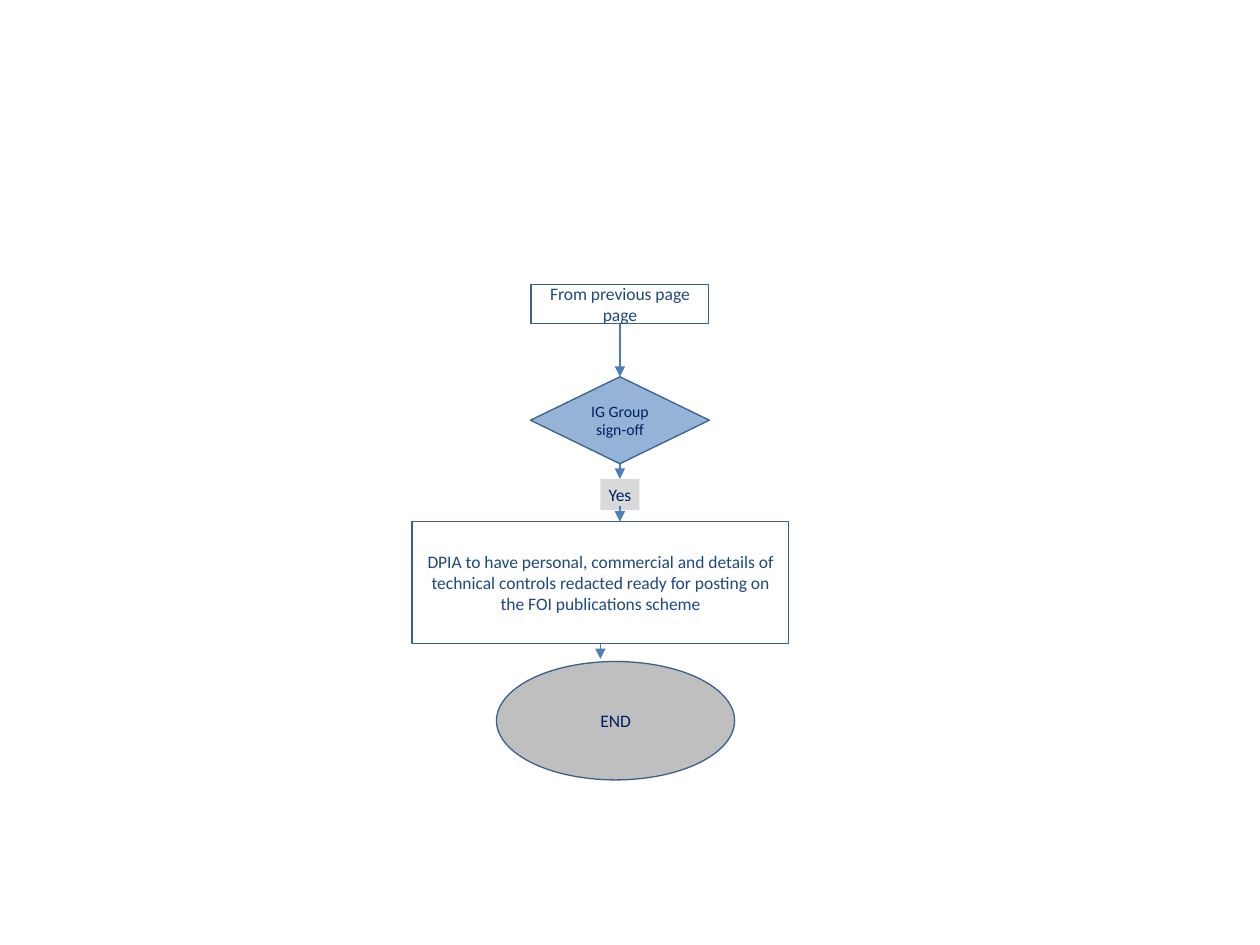
"""Build the closing page of the DPIA sign-off flowchart."""
import dataclasses

import pptx
import pptx.dml.color
import pptx.enum.shapes
import pptx.enum.text
import pptx.oxml
import pptx.oxml.ns
import pptx.util

SHAPES = pptx.enum.shapes.MSO_SHAPE
ANCHOR = pptx.enum.text.MSO_ANCHOR
TOP, BOTTOM = 0, 2
AXIS = 49.2


@dataclasses.dataclass(frozen=True)
class Theme:
    font: str = "Calibri"
    body: float = 10
    small: float = 9
    stroke: float = 0.75
    outline: str = "3A5F8C"
    arrow: str = "4B7EBC"
    navy: str = "002060"
    blue: str = "1F497D"
    white: str = "FFFFFF"
    decision: str = "95B3D7"
    answer: str = "D9D9D9"
    terminal: str = "BFBFBF"


THEME = Theme()

STEPS = {
    "previous": dict(text="From previous page page", kind=SHAPES.RECTANGLE,
                     centre=AXIS, top=30.13, width=14.1, height=4.13,
                     fill=THEME.white, ink=THEME.blue),
    "sign-off": dict(text="IG Group sign-off", kind=SHAPES.DIAMOND,
                     centre=AXIS, top=39.87, width=14.2, height=9.2,
                     fill=THEME.decision, ink=THEME.navy, size=THEME.small, inset=0),
    "yes": dict(text="Yes", kind=SHAPES.RECTANGLE,
                centre=AXIS, top=50.67, width=3.1, height=3.33,
                fill=THEME.answer, ink=THEME.navy, inset=0.04,
                outlined=False, anchor=ANCHOR.TOP),
    "redaction": dict(text="DPIA to have personal, commercial and details of technical "
                           "controls redacted ready for posting on the FOI publications scheme",
                      kind=SHAPES.RECTANGLE,
                      centre=47.65, top=55.2, width=29.9, height=12.93,
                      fill=THEME.white, ink=THEME.blue),
    "end": dict(text="END", kind=SHAPES.OVAL,
                centre=48.85, top=70, width=18.9, height=12.53,
                fill=THEME.terminal, ink=THEME.navy),
}

ARROWS = [
    dict(x=AXIS, start=34.26, end=39.87, source="previous", target="sign-off"),
    dict(x=AXIS, start=49.07, end=50.67, source="sign-off", target="yes"),
    dict(x=AXIS, start=53.6, end=55.2),
    dict(x=47.65, start=68.13, end=69.73, source="redaction"),
]

deck = pptx.Presentation()
deck.slide_width = pptx.util.Inches(10)
deck.slide_height = pptx.util.Inches(7.5)
page = deck.slides.add_slide(deck.slide_layouts[6])


def across(percent):
    return round(deck.slide_width * percent / 100)


def down(percent):
    return round(deck.slide_height * percent / 100)


def colour(value):
    return pptx.dml.color.RGBColor.from_string(value)


def add_step(text, kind, centre, top, width, height, fill, ink,
             size=THEME.body, inset=None, outlined=True, anchor=ANCHOR.MIDDLE):
    box = page.shapes.add_shape(kind, across(centre - width / 2), down(top),
                                across(width), down(height))
    box.shadow.inherit = False
    box.fill.solid()
    box.fill.fore_color.rgb = colour(fill)
    if outlined:
        box.line.color.rgb = colour(THEME.outline)
        box.line.width = pptx.util.Pt(THEME.stroke)
    else:
        box.line.fill.background()
    frame = box.text_frame
    frame.word_wrap = True
    frame.vertical_anchor = anchor
    if inset is not None:
        for side in ("left", "top", "right", "bottom"):
            setattr(frame, f"margin_{side}", pptx.util.Inches(inset))
    para = frame.paragraphs[0]
    para.alignment = pptx.enum.text.PP_ALIGN.CENTER
    span = para.add_run()
    span.text = text
    span.font.name = THEME.font
    span.font.size = pptx.util.Pt(size)
    span.font.color.rgb = colour(ink)
    return box


def add_arrow(boxes, x, start, end, source=None, target=None):
    arrow = page.shapes.add_connector(pptx.enum.shapes.MSO_CONNECTOR.STRAIGHT,
                                      across(x), down(start), across(x), down(end))
    if source:
        arrow.begin_connect(boxes[source], BOTTOM)
    if target:
        arrow.end_connect(boxes[target], TOP)
    arrow.line.color.rgb = colour(THEME.arrow)
    arrow.line.width = pptx.util.Pt(THEME.stroke)
    head = pptx.oxml.parse_xml(
        f'<a:tailEnd {pptx.oxml.ns.nsdecls("a")} type="triangle"/>')
    arrow.line._get_or_add_ln().append(head)
    arrow._element.spPr.append(pptx.oxml.parse_xml(
        f'<a:effectLst {pptx.oxml.ns.nsdecls("a")}/>'))


boxes = {name: add_step(**step) for name, step in STEPS.items()}
for link in ARROWS:
    add_arrow(boxes, **link)

deck.save("out.pptx")
